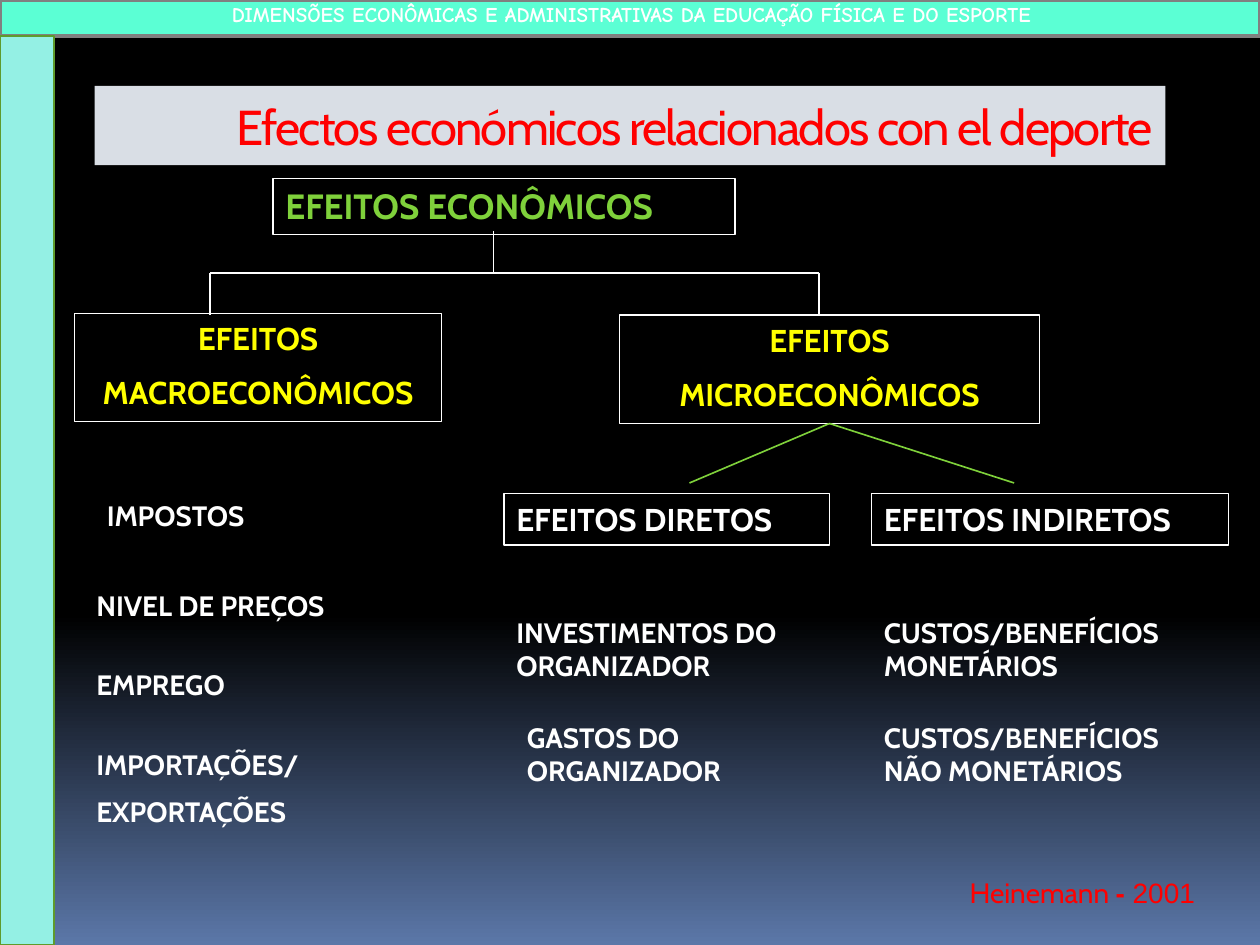
from lxml import etree
from pptx import Presentation
from pptx.dml.color import RGBColor as Rgb
from pptx.enum import shapes as kinds, text as t
from pptx.oxml.ns import qn
from pptx.util import Pt


class Theme:
    black, white = Rgb(0, 0, 0), Rgb(255, 255, 255)
    blue, pale = Rgb(0x5B, 0x77, 0xA8), Rgb(0xD9, 0xDE, 0xE5)
    red, yellow = Rgb(255, 0, 0), Rgb(255, 255, 0)
    green, olive = Rgb(0x7F, 0xD1, 0x3B), Rgb(0x5E, 0x9B, 0x2C)
    mint, aqua = Rgb(0x5B, 0xFF, 0xD4), Rgb(0x94, 0xF0, 0xE4)
    gray = Rgb(128, 128, 128)
    font, plain, comic = "Cabin", "Arial", "Comic Neue"
    title, root, branch, item, head = 28, 20, 18, 16, 12
    thin = 0.75


deck = Presentation()
deck.slide_width, deck.slide_height = Pt(720), Pt(540)
slide = deck.slides.add_slide(deck.slide_layouts[5])

# Background: black down to 65 %, then fading to blue
back = slide.background.fill
back.gradient()
back.gradient_angle = 270
for stop, (place, color) in zip(back.gradient_stops,
                                [(0.65, Theme.black), (1, Theme.blue)]):
    stop.position, stop.color.rgb = place, color

# Title
title = slide.shapes.title
title.left, title.top, title.width, title.height = Pt(54), Pt(49), Pt(612), Pt(45.4)
title.fill.solid()
title.fill.fore_color.rgb = Theme.pale
frame = title.text_frame
frame.text = "Efectos económicos relacionados con el deporte"
frame.vertical_anchor = t.MSO_ANCHOR.MIDDLE
para = frame.paragraphs[0]
para.alignment = t.PP_ALIGN.RIGHT
para.font.name, para.font.size = Theme.font, Pt(Theme.title)
para.font.color.rgb = Theme.red
para.runs[0]._r.get_or_add_rPr().set("spc", "-100")


def add_text(area, lines, size, color, edge=False, align=t.PP_ALIGN.LEFT,
             face=Theme.font):
    """Add a bold text box, with a thin white edge if asked."""
    box = slide.shapes.add_textbox(*map(Pt, area))
    if edge:
        box.line.color.rgb, box.line.width = Theme.white, Pt(Theme.thin)
    frame = box.text_frame
    frame.word_wrap = True
    frame.auto_size = t.MSO_AUTO_SIZE.SHAPE_TO_FIT_TEXT
    for i, line in enumerate(lines):
        para = frame.add_paragraph() if i else frame.paragraphs[0]
        para.text, para.alignment = line, align
        if i:
            para.space_before = Pt(size / 2)
        font = para.font
        font.name, font.size, font.bold = face, Pt(size), True
        font.color.rgb = color
    return box


def add_line(x1, y1, x2, y2, color, width):
    """Add a straight line without shadow."""
    line = slide.shapes.add_connector(kinds.MSO_CONNECTOR.STRAIGHT,
                                      Pt(x1), Pt(y1), Pt(x2), Pt(y2))
    line.line.color.rgb, line.line.width = color, Pt(width)
    etree.SubElement(line._element.spPr, qn("a:effectLst"))


# Boxes of the tree
add_text((156, 102, 264, 32), ["EFEITOS ECONÔMICOS"], Theme.root, Theme.green, True)
for area, word in [((354, 180, 240, 62), "MICROECONÔMICOS"),
                   ((42.5, 179, 210, 62), "MACROECONÔMICOS")]:
    add_text(area, ["EFEITOS", word], Theme.branch, Theme.yellow, True,
             t.PP_ALIGN.CENTER)
for left, width, word in [(288, 186, "EFEITOS DIRETOS"),
                          (498, 204, "EFEITOS INDIRETOS")]:
    add_text((left, 282, width, 29.5), [word], Theme.branch, Theme.white, True)

# Items below the boxes
for area, lines in [
    ((54, 281.5, 126, 27), ["IMPOSTOS"]),
    ((48, 332.5, 186, 27), ["NIVEL DE PREÇOS"]),
    ((48, 378, 126, 27), ["EMPREGO"]),
    ((48, 423.5, 162, 55), ["IMPORTAÇÕES/", "EXPORTAÇÕES"]),
    ((288, 348, 180, 46), ["INVESTIMENTOS DO ORGANIZADOR"]),
    ((294, 408, 150, 46), ["GASTOS DO ORGANIZADOR"]),
    ((498, 348, 204, 46), ["CUSTOS/BENEFÍCIOS MONETÁRIOS"]),
    ((498, 408, 192, 46), ["CUSTOS/BENEFÍCIOS NÃO MONETÁRIOS"]),
]:
    add_text(area, lines, Theme.item, Theme.white)

# Lines of the tree
stem, fork = 282, 156
add_line(stem, 132, stem, fork, Theme.white, Theme.thin)
for x in (468, 120):
    add_line(stem, fork, x, fork, Theme.white, Theme.thin)
    add_line(x, fork, x, 180, Theme.white, Theme.thin)
for x in (394, 579.5):
    add_line(474, 242, x, 276, Theme.green, 0.94)

# Source
box = slide.shapes.add_textbox(Pt(547), Pt(497), Pt(150.5), Pt(26.6))
frame = box.text_frame
frame.word_wrap = False
para = frame.paragraphs[0]
para.font.size, para.font.color.rgb = Pt(Theme.item), Theme.red
for word, face, bold in [("Heinemann ", Theme.font, False),
                         ("- ", Theme.plain, True),
                         ("2001", Theme.plain, False)]:
    run = para.add_run()
    run.text, run.font.name, run.font.bold = word, face, bold

# Top band and side bar
for area, fill, edge, width in [
    ((0, 0, 720, 20.5), Theme.mint, Theme.gray, 2),
    ((0, 20.5, 31, 519.5), Theme.aqua, Theme.olive, 1.5),
]:
    bar = slide.shapes.add_shape(kinds.MSO_SHAPE.RECTANGLE, *map(Pt, area))
    bar.shadow.inherit = False
    bar.fill.solid()
    bar.fill.fore_color.rgb = fill
    bar.line.color.rgb, bar.line.width = edge, Pt(width)

head = add_text(
    (25, 0, 672, 19),
    ["DIMENSÕES ECONÔMICAS E ADMINISTRATIVAS DA EDUCAÇÃO FÍSICA E DO ESPORTE"],
    Theme.head, Theme.white, align=t.PP_ALIGN.CENTER, face=Theme.comic)
head.text_frame.paragraphs[0].line_spacing = 0.8

deck.save("out.pptx")
